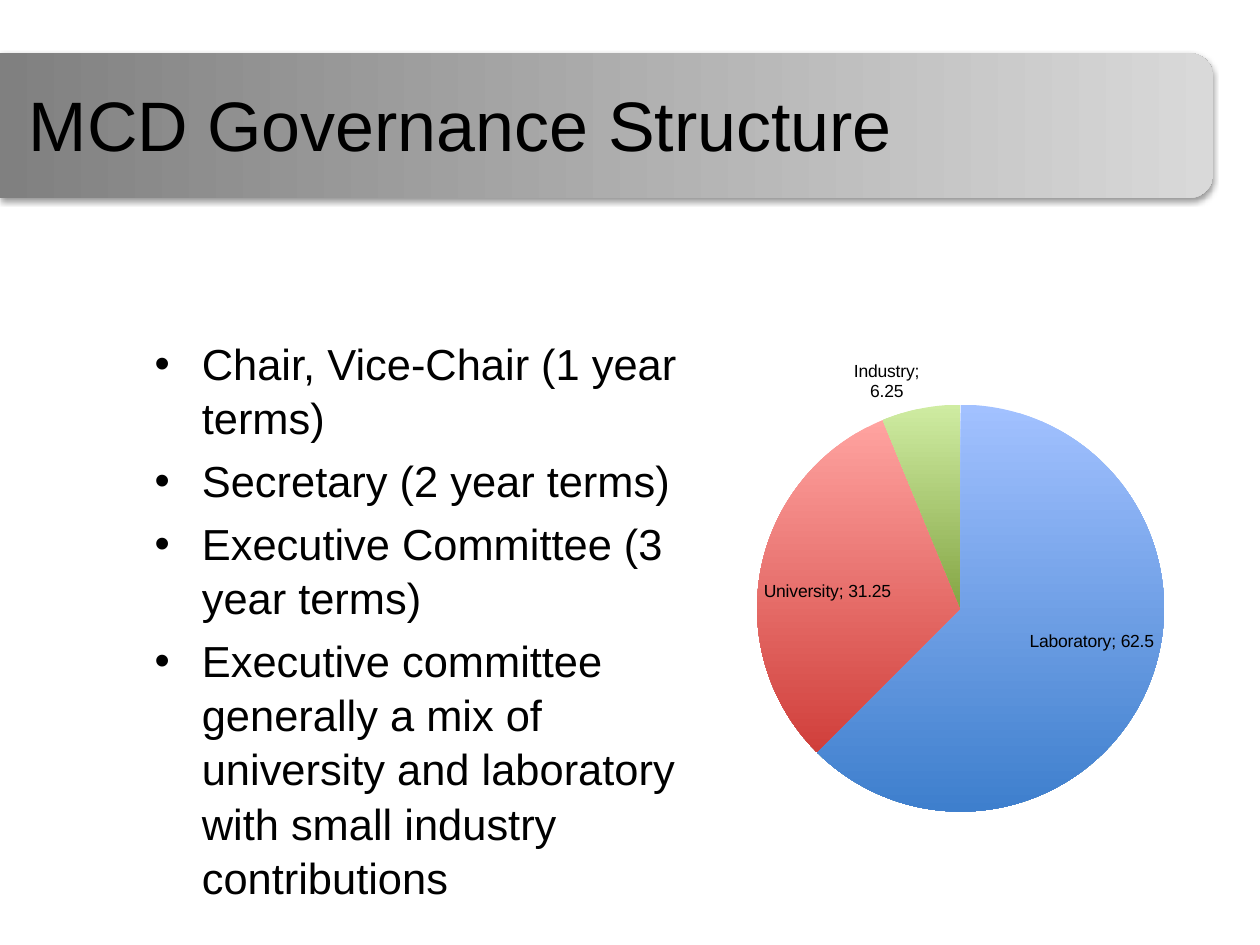
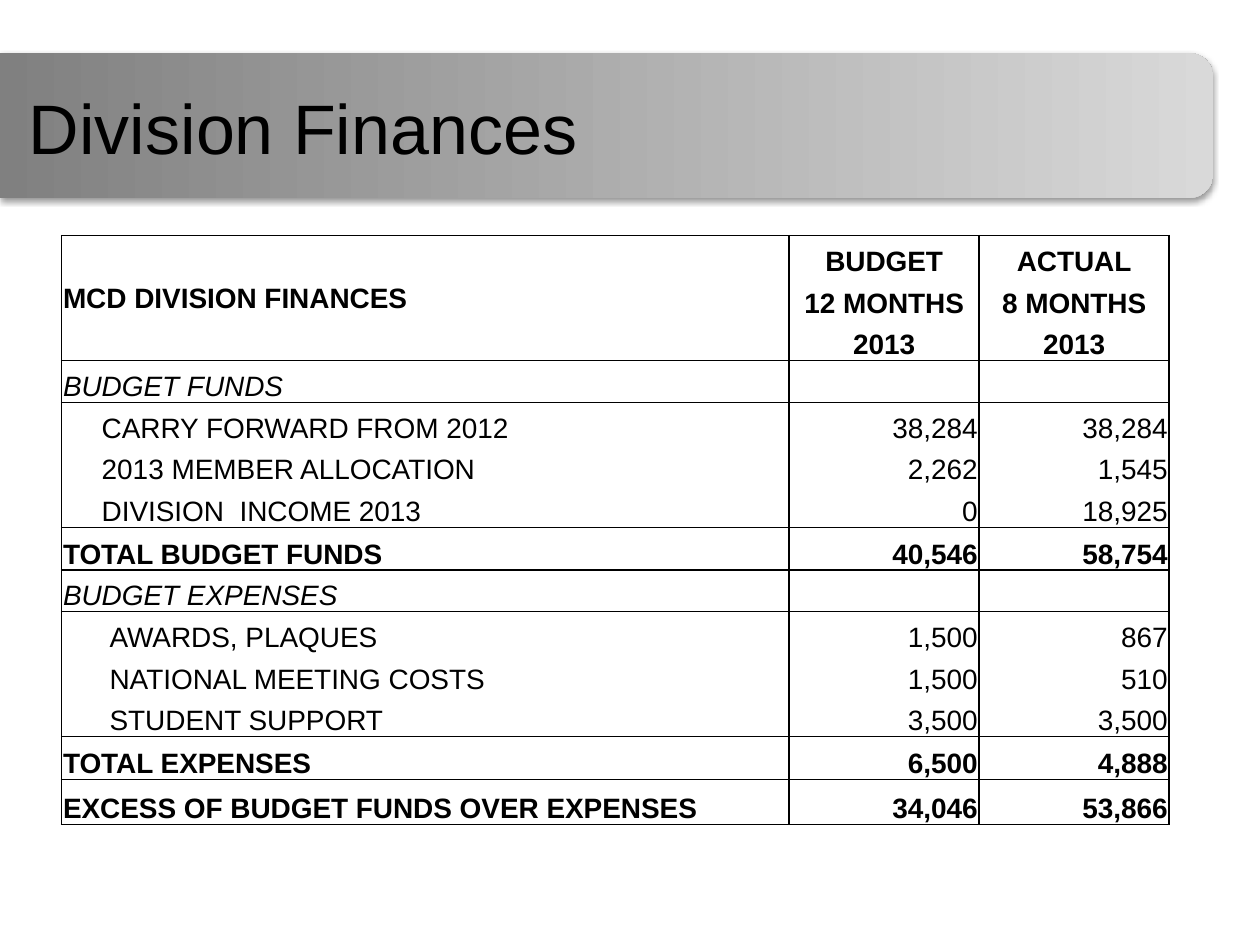
from lxml import etree
from pptx import Presentation
from pptx.chart.data import CategoryChartData
from pptx.dml.color import RGBColor
from pptx.enum.chart import XL_CHART_TYPE, XL_LABEL_POSITION
from pptx.enum.shapes import MSO_SHAPE
from pptx.enum.text import MSO_ANCHOR, MSO_AUTO_SIZE, PP_ALIGN
from pptx.oxml import parse_xml
from pptx.oxml.ns import nsdecls, qn
from pptx.util import Cm, Pt

PIE = XL_CHART_TYPE.PIE
BEST = XL_LABEL_POSITION.BEST_FIT
ROUND = MSO_SHAPE.ROUND_2_SAME_RECTANGLE
TOP, MIDDLE, BOTTOM = MSO_ANCHOR.TOP, MSO_ANCHOR.MIDDLE, MSO_ANCHOR.BOTTOM
LEFT, CENTER, RIGHT = PP_ALIGN.LEFT, PP_ALIGN.CENTER, PP_ALIGN.RIGHT
NO_FIT = MSO_AUTO_SIZE.NONE

FONT = "Arial"
BLACK = RGBColor(0x00, 0x00, 0x00)
GREY = RGBColor(0x80, 0x80, 0x80)
PALE = RGBColor(0xD9, 0xD9, 0xD9)
SLICES = [  # top and bottom colour of each slice
    (RGBColor(0xA2, 0xC1, 0xFF), RGBColor(0x3E, 0x7F, 0xCD)),
    (RGBColor(0xFF, 0xA3, 0xA0), RGBColor(0xD0, 0x3F, 0x3B)),
    (RGBColor(0xCF, 0xEC, 0xA2), RGBColor(0x84, 0xA5, 0x44)),
]
NO_GRID = "{2D5ABB26-0587-4C30-8999-92F81FD0307C}"

POINTS = [
    "Chair, Vice-Chair (1 year terms)",
    "Secretary (2 year terms)",
    "Executive Committee (3 year terms)",
    "Executive committee generally a mix of university and laboratory "
    "with small industry contributions",
]
SHARES = {"Laboratory": 62.5, "University": 31.25, "Industry": 6.25}

HEAD, GROUP, FUND, COST, TOTAL = range(5)
INDENT = {FUND: 0.78, COST: 0.94}
ROWS = [
    (HEAD, "MCD DIVISION FINANCES", "BUDGET", "ACTUAL"),
    (HEAD, "", "12 MONTHS", "8 MONTHS"),
    (HEAD, "", "2013", "2013"),
    (GROUP, "BUDGET FUNDS", "", ""),
    (FUND, "CARRY FORWARD FROM 2012", "38,284", "38,284"),
    (FUND, "2013 MEMBER ALLOCATION", "2,262", "1,545"),
    (FUND, "DIVISION  INCOME 2013", "0", "18,925"),
    (TOTAL, "TOTAL BUDGET FUNDS", "40,546", "58,754"),
    (GROUP, "BUDGET EXPENSES", "", ""),
    (COST, "AWARDS, PLAQUES", "1,500", "867"),
    (COST, "NATIONAL MEETING COSTS", "1,500", "510"),
    (COST, "STUDENT SUPPORT", "3,500", "3,500"),
    (TOTAL, "TOTAL EXPENSES", "6,500", "4,888"),
    (TOTAL, "EXCESS OF BUDGET FUNDS OVER EXPENSES", "34,046", "53,866"),
]


def add_run(para, text, size, bold=False, italic=False):
    run = para.add_run()
    run.text = text
    font = run.font
    font.name, font.size = FONT, Pt(size)
    font.bold, font.italic = bold, italic
    font.color.rgb = BLACK


def blend(fill, first, last, angle):
    fill.gradient()
    fill.gradient_angle = angle
    for stop, (place, color) in zip(fill.gradient_stops, [(0, first), (1, last)]):
        stop.position = place
        stop.color.rgb = color


def add_band(slide, layout, left, top, width, height):
    """Draw the title band, then move it to the layout all slides share."""
    shift = (width - height) / 2  # the shape stands upright before its turn
    band = slide.shapes.add_shape(
        ROUND, Cm(left + shift), Cm(top - shift), Cm(height), Cm(width))
    band.rotation = 90
    band.line.fill.background()
    blend(band.fill, GREY, PALE, 0)
    props = band.element.spPr
    props.find(qn("a:gradFill")).set("rotWithShape", "0")
    props.append(parse_xml(
        f'<a:effectLst {nsdecls("a")}><a:outerShdw blurRad="40000" dist="20000" '
        'dir="5400000" rotWithShape="0"><a:srgbClr val="000000">'
        '<a:alpha val="38000"/></a:srgbClr></a:outerShdw></a:effectLst>'))
    layout.shapes.element.insert(2, band.element)


def set_title(slide, text, top):
    title = slide.shapes.title
    title.left, title.top, title.width, title.height = (
        Cm(0.33), Cm(top), Cm(23), Cm(1.96))
    frame = title.text_frame
    frame.auto_size = NO_FIT
    frame.vertical_anchor = TOP
    para = frame.paragraphs[0]
    para.alignment = LEFT
    add_run(para, text, 40)


def add_list(slide, left, top, width, height):
    box = slide.shapes.add_textbox(Cm(left), Cm(top), Cm(width), Cm(height))
    frame = box.text_frame
    frame.word_wrap = True
    for i, text in enumerate(POINTS):
        para = frame.paragraphs[0] if i == 0 else frame.add_paragraph()
        props = para._p.get_or_add_pPr()
        props.set("marL", str(Cm(0.95)))
        props.set("indent", str(-Cm(0.95)))
        etree.SubElement(props, qn("a:buFont"), typeface=FONT)
        etree.SubElement(props, qn("a:buChar"), char="•")
        para.line_spacing = 1.04
        if i:
            para.space_before = Pt(5)
        add_run(para, text, 24.8)


def add_pie(slide, left, top, width, height):
    data = CategoryChartData()
    data.categories = list(SHARES)
    data.add_series("Series 1", list(SHARES.values()))
    chart = slide.shapes.add_chart(
        PIE, Cm(left), Cm(top), Cm(width), Cm(height), data).chart
    chart.has_title = chart.has_legend = False
    chart.font.name, chart.font.size = FONT, Pt(10)
    chart.font.color.rgb = BLACK

    plot = chart.plots[0]
    plot.vary_by_categories = True
    for i, (light, dark) in enumerate(SLICES):
        form = plot.series[0].points[i].format
        blend(form.fill, light, dark, 270)
        form.line.fill.background()

    plot.has_data_labels = True
    labels = plot.data_labels
    labels.show_value = labels.show_category_name = True
    labels.show_percentage = False
    labels.position = BEST
    mark = parse_xml(f'<c:separator {nsdecls("c")}>; </c:separator>')
    next(chart.element.iter(qn("c:showBubbleSize"))).addnext(mark)

    area = next(chart.element.iter(qn("c:plotArea")))
    for old in area.findall(qn("c:layout")):
        area.remove(old)
    spots = "".join(f'<c:{k} val="{v}"/>' for k, v in [
        ("layoutTarget", "inner"), ("xMode", "edge"), ("yMode", "edge"),
        ("x", 0.09), ("y", 0.12), ("w", 0.81), ("h", 0.84)])
    area.insert(0, parse_xml(
        f'<c:layout {nsdecls("c")}><c:manualLayout>{spots}'
        '</c:manualLayout></c:layout>'))


def rule_cell(cell, sides):
    """Draw black lines on the given sides, in L, R, T, B order."""
    props = cell._tc.get_or_add_tcPr()
    for i, side in enumerate(sides):
        props.insert(i, parse_xml(
            f'<a:ln{side} {nsdecls("a")} w="12700"><a:solidFill>'
            f'<a:srgbClr val="{BLACK}"/></a:solidFill></a:ln{side}>'))


def fill_cell(cell, text, kind, col):
    cell.margin_left = Cm(0.03 + (0 if col else INDENT.get(kind, 0)))
    cell.margin_right = cell.margin_top = Cm(0.03)
    cell.margin_bottom = 0
    cell.vertical_anchor = BOTTOM
    cell.fill.background()
    para = cell.text_frame.paragraphs[0]
    if col:
        para.alignment = CENTER if kind == HEAD else RIGHT
    if text:
        add_run(para, text, 16, kind in (HEAD, TOTAL), kind == GROUP)
    else:
        para.font.size = Pt(16)


def add_funds(slide, left, top, width, height):
    table = slide.shapes.add_table(
        len(ROWS), 3, Cm(left), Cm(top), Cm(width), Cm(height)).table
    table.first_row = table.horz_banding = False
    next(table._tbl.iter(qn("a:tableStyleId"))).text = NO_GRID
    side = 3.83
    for col, size in zip(table.columns, (width - 2 * side, side, side)):
        col.width = Cm(size)

    kinds = [row[0] for row in ROWS]
    last = len(ROWS) - 1
    for r, (kind, *texts) in enumerate(ROWS):
        table.rows[r].height = Cm(
            0.91 if r == last else 0.86 if kind == TOTAL else 0.84)
        starts = r == 0 or kind == TOTAL or (
            kind == GROUP)
        ends = r == last or kind == TOTAL or kinds[r + 1] in (GROUP, TOTAL)
        sides = "LR" + "T" * starts + "B" * ends
        for c, text in enumerate(texts):
            cell = table.cell(r, c)
            fill_cell(cell, text, kind, c)
            rule_cell(cell, "LRTB" if r == c == 0 else sides)
    title = table.cell(0, 0)
    title.merge(table.cell(2, 0))
    title.vertical_anchor = MIDDLE


def main():
    deck = Presentation()
    deck.slide_width, deck.slide_height = Cm(25.4), Cm(19.05)
    layout = deck.slide_layouts.get_by_name("Title Only")

    slide = deck.slides.add_slide(layout)
    add_band(slide, layout, 0, 1.07, 24.46, 2.92)
    set_title(slide, "MCD Governance Structure", 1.52)
    add_list(slide, 2.87, 6.63, 11.48, 10.39)
    add_pie(slide, 14.35, 6.98, 10.13, 9.78)

    slide = deck.slides.add_slide(layout)
    set_title(slide, "Division Finances", 1.57)
    add_funds(slide, 1.24, 4.75, 22.33, 11.87)
    deck.save("out.pptx")


if __name__ == "__main__":
    main()
